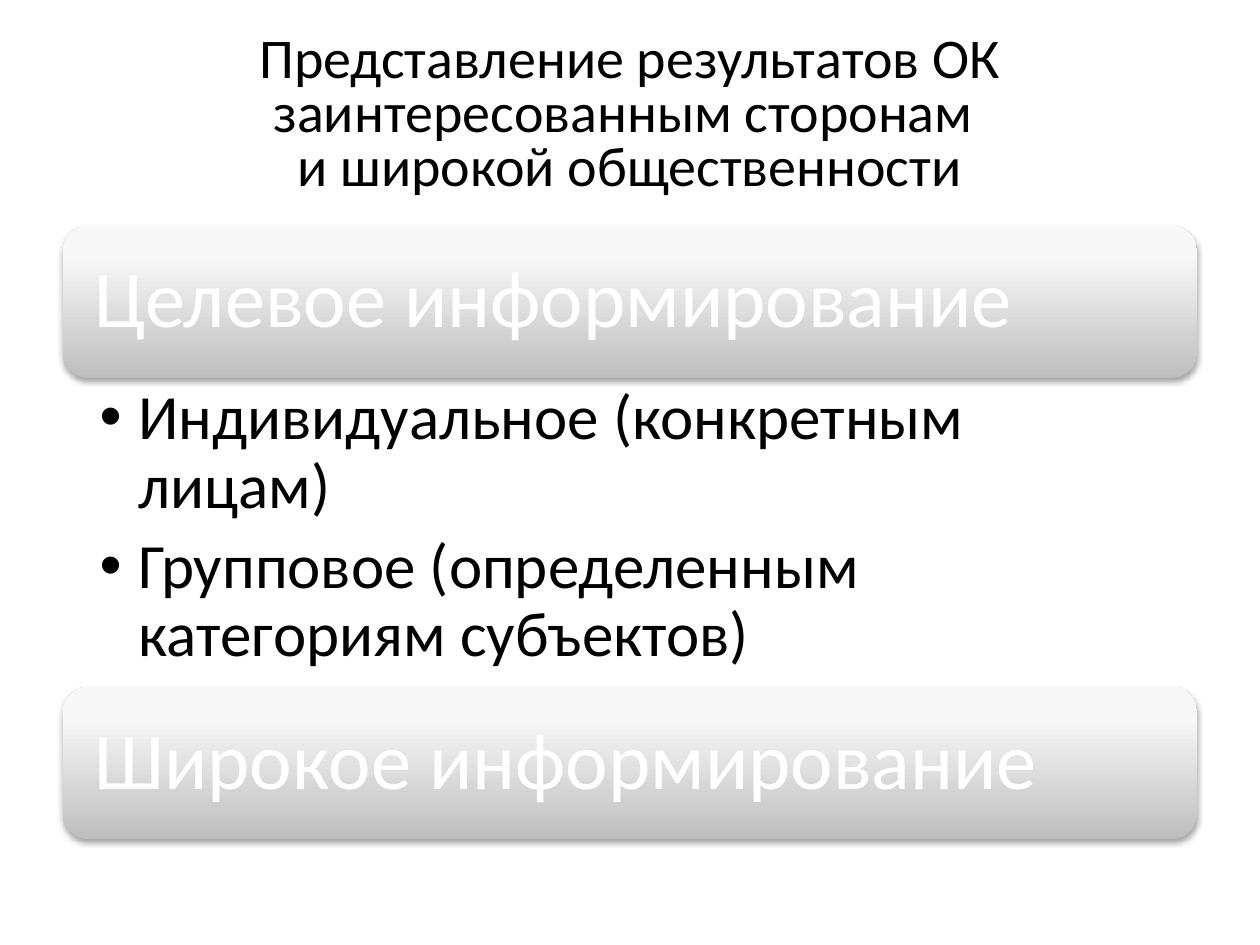
from lxml import etree
from pptx import Presentation
from pptx.dml.color import RGBColor
from pptx.enum.shapes import MSO_SHAPE
from pptx.enum.text import MSO_ANCHOR, PP_ALIGN
from pptx.oxml import parse_xml
from pptx.oxml.ns import qn
from pptx.util import Inches, Pt

ROUNDED = MSO_SHAPE.ROUNDED_RECTANGLE
TOP, MIDDLE = MSO_ANCHOR.TOP, MSO_ANCHOR.MIDDLE
LEFT, CENTER = PP_ALIGN.LEFT, PP_ALIGN.CENTER
BLACK = RGBColor(0x00, 0x00, 0x00)
WHITE = RGBColor(0xFF, 0xFF, 0xFF)
FONT = "Calibri"
NAMESPACE = 'xmlns:a="http://schemas.openxmlformats.org/drawingml/2006/main"'

TITLE = "Представление результатов ОК заинтересованным сторонам \vи широкой общественности"
SECTIONS = [
    ("Целевое информирование", [
        "Индивидуальное (конкретным лицам)",
        "Групповое (определенным категориям субъектов)",
    ]),
    ("Широкое информирование", []),
]
GRADIENT_STOPS = [(0, "BEBEBE"), (80, "F7F7F7"), (100, "F8F8F8")]

MARGIN, WIDTH = 0.5, 9
BANNER_TOP, BANNER_HEIGHT, BANNER_INSET = 1.79, 1.21, 0.06
LIST_HEIGHT = 2.45


def add_text(slide, box, paragraphs, size, color, anchor, insets, spacing, align=LEFT):
    text_box = slide.shapes.add_textbox(*map(Inches, box))
    frame = text_box.text_frame
    frame.word_wrap = True
    frame.vertical_anchor = anchor
    (frame.margin_left, frame.margin_top,
     frame.margin_right, frame.margin_bottom) = map(Inches, insets)
    frame.text = "\n".join(paragraphs)
    for paragraph in frame.paragraphs:
        paragraph.alignment = align
        paragraph.line_spacing = spacing
        for run in paragraph.runs:
            run.font.name = FONT
            run.font.size = Pt(size)
            run.font.color.rgb = color
    return frame


def add_banner(slide, top, heading):
    shape = slide.shapes.add_shape(
        ROUNDED, Inches(MARGIN), Inches(top), Inches(WIDTH), Inches(BANNER_HEIGHT))
    shape.line.fill.background()
    stops = "".join(
        f'<a:gs pos="{position * 1000}"><a:srgbClr val="{color}"/></a:gs>'
        for position, color in GRADIENT_STOPS)
    gradient = parse_xml(
        f'<a:gradFill {NAMESPACE} rotWithShape="1"><a:gsLst>{stops}</a:gsLst>'
        '<a:lin ang="16200000" scaled="0"/></a:gradFill>')
    shadow = parse_xml(
        f'<a:effectLst {NAMESPACE}><a:outerShdw blurRad="{Pt(3.1)}" dist="{Pt(1.8)}" '
        'dir="5400000" rotWithShape="0"><a:srgbClr val="000000">'
        '<a:alpha val="35000"/></a:srgbClr></a:outerShdw></a:effectLst>')
    properties = shape._element.spPr
    properties.find(qn("a:prstGeom")).addnext(gradient)
    properties.append(shadow)
    box = (MARGIN + BANNER_INSET, top + BANNER_INSET,
           WIDTH - 2 * BANNER_INSET, BANNER_HEIGHT - 2 * BANNER_INSET)
    add_text(slide, box, [heading], 46, WHITE, MIDDLE, [0.19] * 4, 0.9)


def add_bullets(slide, top, items):
    frame = add_text(slide, (MARGIN, top, WIDTH, LIST_HEIGHT), items, 36, BLACK,
                     TOP, (0.29, 0.06, 0.36, 0.06), 0.9)
    for paragraph in frame.paragraphs:
        paragraph.space_after = Pt(7)
        properties = paragraph._p.get_or_add_pPr()
        properties.set("marL", str(Inches(0.31)))
        properties.set("indent", str(-Inches(0.31)))
        etree.SubElement(properties, qn("a:buFont")).set("typeface", "Arial")
        etree.SubElement(properties, qn("a:buChar")).set("char", "•")


def main():
    presentation = Presentation()
    presentation.slide_width, presentation.slide_height = Inches(10), Inches(7.5)
    slide = presentation.slides.add_slide(presentation.slide_layouts[6])
    add_text(slide, (MARGIN, 0.3, WIDTH, 1.25), [TITLE], 32, BLACK, MIDDLE,
             (0.1, 0.05, 0.1, 0.05), 0.8, CENTER)
    top = BANNER_TOP
    for heading, items in SECTIONS:
        add_banner(slide, top, heading)
        top += BANNER_HEIGHT
        if items:
            add_bullets(slide, top, items)
            top += LIST_HEIGHT
    presentation.save("out.pptx")


if __name__ == "__main__":
    main()
